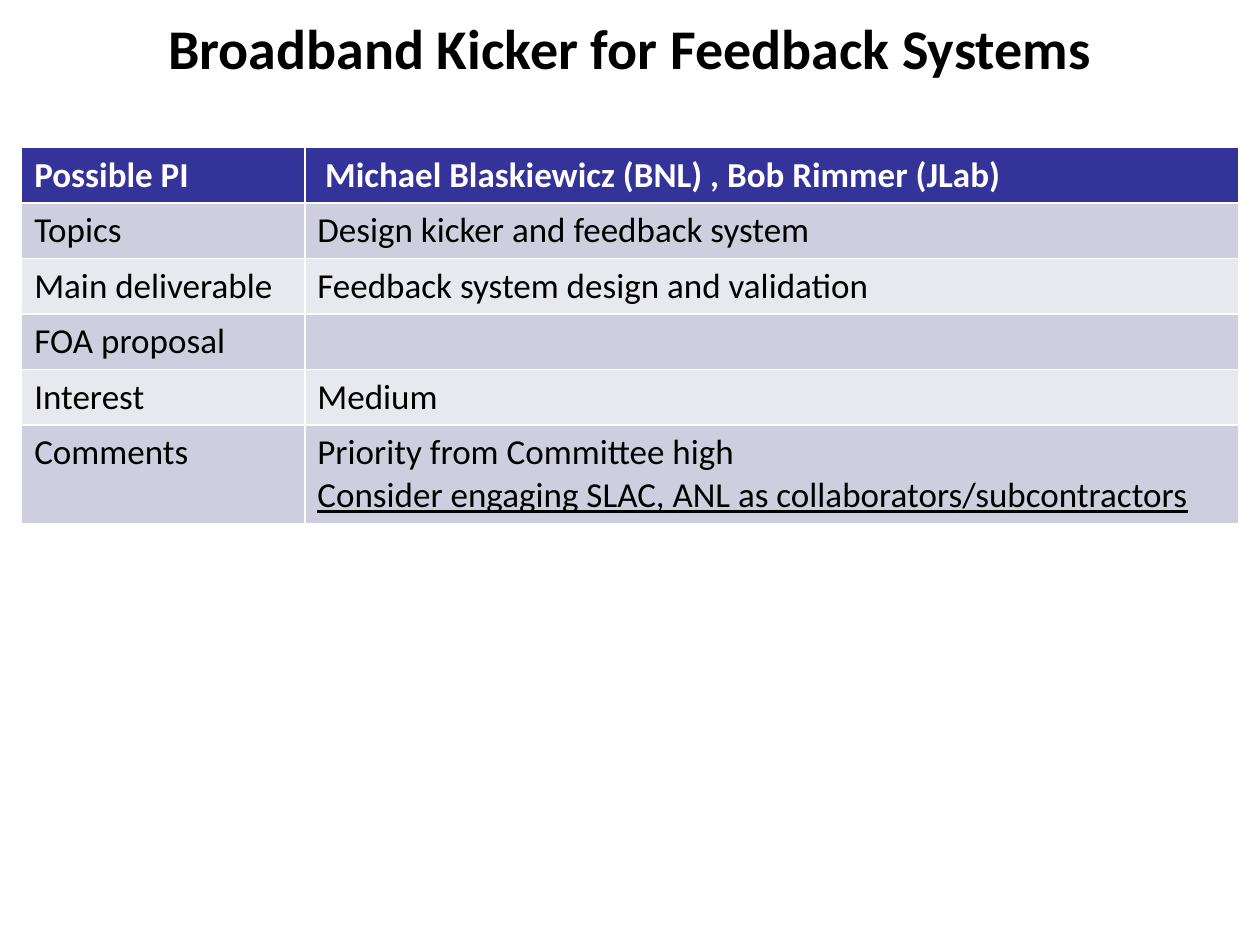
import pptx
import pptx.dml.color
import pptx.enum.text
import pptx.util

Pt = pptx.util.Pt

TITLE = "Broadband Kicker for Feedback Systems"
ROWS = [
    ("Possible PI", "Michael Blaskiewicz (BNL) , Bob Rimmer (JLab)"),
    ("Topics", "Design kicker and feedback system"),
    ("Main deliverable", "Feedback system design and validation"),
    ("FOA proposal", ""),
    ("Interest", "Medium"),
    ("Comments", "Priority from Committee high\n"
                 "Consider engaging SLAC, ANL as collaborators/subcontractors"),
]
UNDERLINED = "Consider engaging"

FONT = "Calibri"
HEADER_FILL = "333399"
BAND_FILLS = ["E8E8EF", "CECEDE"]
SLIDE_WIDTH, SLIDE_HEIGHT = 720, 540
TITLE_HEIGHT = 54
TABLE_LEFT, TABLE_TOP = 12.4, 84.4
COLUMN_WIDTHS = [161.8, 533.8]
ROW_HEIGHT, LAST_ROW_HEIGHT = 31.7, 55.5
HEADER_INDENT = 11.7


def color(hex_string):
    return pptx.dml.color.RGBColor.from_string(hex_string)


def format_font(font, size, hex_string, bold):
    font.name = FONT
    font.size = Pt(size)
    font.bold = bold
    font.color.rgb = color(hex_string)


def add_title(slide):
    title = slide.shapes.title
    title.left, title.top = Pt(0), Pt(0)
    title.width, title.height = Pt(SLIDE_WIDTH), Pt(TITLE_HEIGHT)
    title.text_frame.text = TITLE
    title.text_frame.vertical_anchor = pptx.enum.text.MSO_ANCHOR.MIDDLE
    paragraph = title.text_frame.paragraphs[0]
    paragraph.alignment = pptx.enum.text.PP_ALIGN.CENTER
    format_font(paragraph.runs[0].font, 32, "000000", True)


def fill_cell(cell, text, row_index):
    is_header = row_index == 0
    cell.fill.solid()
    cell.fill.fore_color.rgb = color(HEADER_FILL if is_header else BAND_FILLS[row_index % 2])
    cell.text_frame.text = text
    for paragraph in cell.text_frame.paragraphs:
        for run in paragraph.runs:
            format_font(run.font, 20, "FFFFFF" if is_header else "000000", is_header)
            if run.text.startswith(UNDERLINED):
                run.font.underline = True


def add_details_table(slide):
    heights = [ROW_HEIGHT] * (len(ROWS) - 1) + [LAST_ROW_HEIGHT]
    table = slide.shapes.add_table(
        len(ROWS), len(COLUMN_WIDTHS), Pt(TABLE_LEFT), Pt(TABLE_TOP),
        Pt(sum(COLUMN_WIDTHS)), Pt(sum(heights))).table
    for column, width in zip(table.columns, COLUMN_WIDTHS):
        column.width = Pt(width)
    for row_index, (texts, height) in enumerate(zip(ROWS, heights)):
        table.rows[row_index].height = Pt(height)
        for column_index, text in enumerate(texts):
            fill_cell(table.cell(row_index, column_index), text, row_index)
    table.cell(0, 1).margin_left = Pt(HEADER_INDENT)


def main():
    presentation = pptx.Presentation()
    presentation.slide_width = Pt(SLIDE_WIDTH)
    presentation.slide_height = Pt(SLIDE_HEIGHT)
    slide = presentation.slides.add_slide(presentation.slide_layouts.get_by_name("Title Only"))
    add_title(slide)
    add_details_table(slide)
    presentation.save("out.pptx")


if __name__ == "__main__":
    main()
